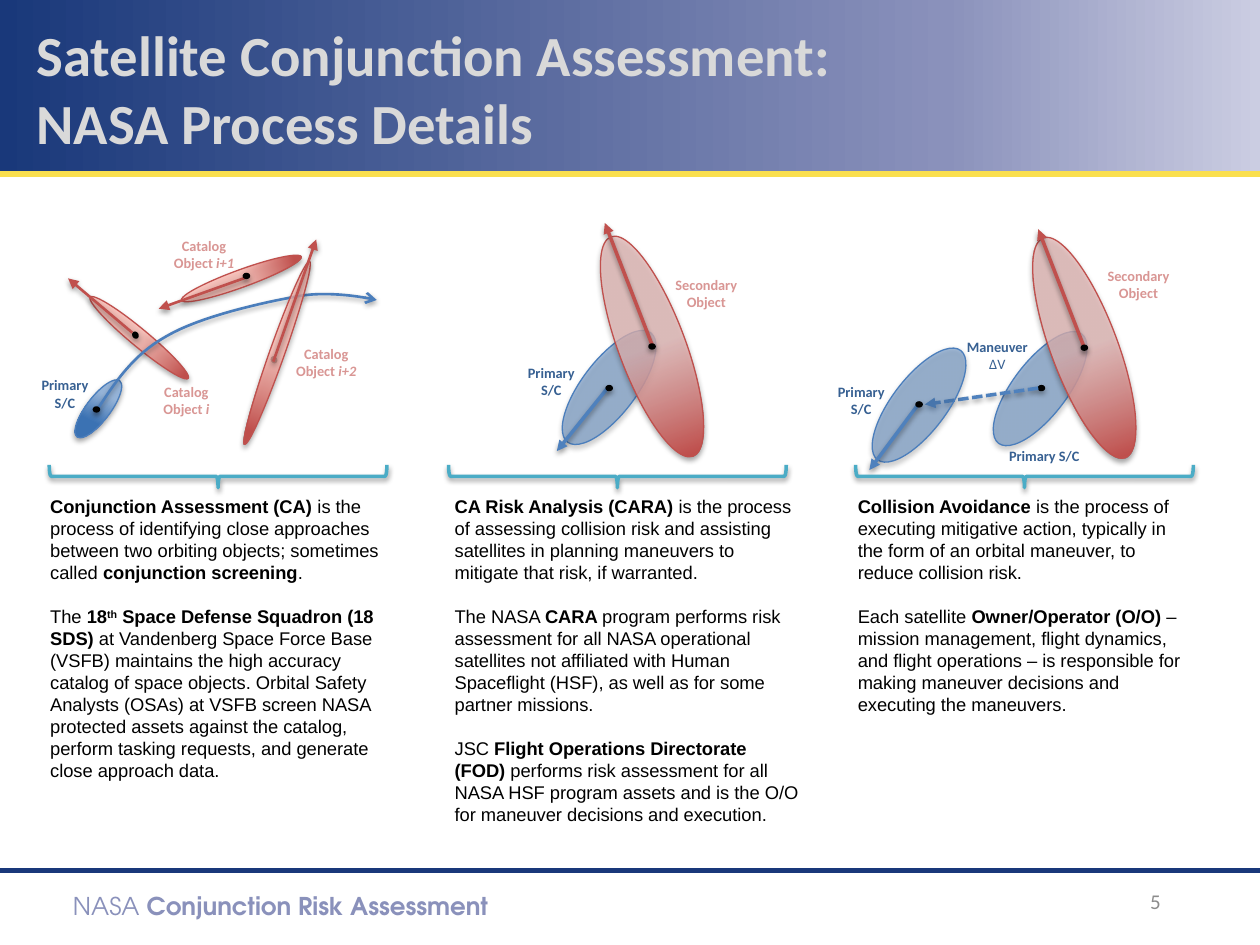
"""Build a slide on the three stages of satellite conjunction assessment."""
from dataclasses import dataclass

from pptx import Presentation
from pptx.dml.color import RGBColor
from pptx.enum.dml import MSO_LINE
from pptx.enum.shapes import MSO_CONNECTOR, MSO_SHAPE
from pptx.enum.text import MSO_ANCHOR, PP_ALIGN
from pptx.oxml import parse_xml
from pptx.oxml.ns import nsdecls, qn
from pptx.util import Pt

RECT, OVAL, BRACE = MSO_SHAPE.RECTANGLE, MSO_SHAPE.OVAL, MSO_SHAPE.RIGHT_BRACE
LINE, DASH = MSO_CONNECTOR.STRAIGHT, MSO_LINE.SQUARE_DOT
LEFT, MID, RIGHT = PP_ALIGN.LEFT, PP_ALIGN.CENTER, PP_ALIGN.RIGHT
CENTRE = MSO_ANCHOR.MIDDLE

COLORS = {
    "navy": "19387A", "lilac": "8A91BB", "mist": "CBCDE2", "gold": "FADF4E",
    "blue": "4F81BD", "edge": "4B7EBC", "sky": "95B3D7", "deep": "3B72B3",
    "red": "C0504D", "rose": "E6B9B8", "pink": "FFB8AF", "teal": "4BACC6",
    "black": "000000", "title": "D9D9D9", "page": "8C8C8C",
    "warm": "D99694", "cool": "376092",
}

# kind: (width, height, edge, gradient angle, stops of position, colour, alpha)
KINDS = {
    "dot": (3.6, 2.9, "black", 0, [(0, "black", 100), (100, "black", 100)]),
    "craft": (78.5, 31, "edge", 0, [(0, "blue", 48), (100, "blue", 48)]),
    "threat": (38.2, 133.9, "red", 90, [(50, "rose", 74), (91, "red", 100)]),
    "near": (40.3, 13.7, "edge", 170, [(33, "sky", 100), (66, "deep", 100)]),
    "thin": (72.7, 10.1, "red", 180, [(50, "pink", 74), (90, "red", 100)]),
    "long": (110.9, 8.6, "red", 180, [(50, "pink", 74), (90, "red", 100)]),
}


@dataclass
class Oval:
    """An ellipse placed by its centre."""
    kind: str
    x: float
    y: float
    turn: float = 0


@dataclass
class Arrow:
    """A straight arrow."""
    start: tuple
    end: tuple
    color: str
    width: float = 2
    dash: bool = False


@dataclass
class Curve:
    """A chain of cubic arcs with an arrowhead."""
    start: tuple
    arcs: list


@dataclass
class Brace:
    """A flat brace under a scene, placed by its centre."""
    x: float


@dataclass
class Label:
    """A small caption in a scene."""
    text: str
    color: str
    x: float
    y: float
    w: float
    align: int = MID


SCENES = [
    Oval("craft", 594.4, 222.1, 307.3), Oval("threat", 619.6, 198.7, 339.5),
    Oval("dot", 595.1, 221.8),
    Arrow((619.9, 199.4), (593.3, 131), "red"),
    Arrow((593.3, 221.8), (528.5, 231.1), "blue", dash=True),
    Oval("craft", 525.2, 231.5, 307.3),
    Arrow((524.2, 231.8), (496.8, 268.6), "blue"),
    Oval("dot", 619.6, 198.7), Oval("dot", 525.2, 231.1), Brace(585.4),
    Oval("craft", 348.1, 221.4, 307.3), Oval("threat", 372.6, 198, 339.5),
    Arrow((373, 198), (345.6, 127.4), "red"),
    Arrow((347.8, 221), (318.2, 257.8), "blue"),
    Oval("dot", 372.6, 198), Oval("dot", 348.1, 221.8), Brace(352.8),
    Oval("near", 56.2, 233.6, 307.3), Oval("thin", 137.9, 159.1, 160),
    Oval("thin", 79.6, 193, 219.7), Oval("dot", 77.4, 191.5, 59.4),
    Curve((54.7, 235.4), [((65.5, 218.9), (75.6, 203), (95, 192.2)),
                          ((114.5, 180.7), (150.5, 172.8), (170.6, 169.2)),
                          ((190.8, 165.6), (215.3, 171.4), (215.3, 171.4))]),
    Arrow((75.6, 190.1), (38.9, 159.1), "red", 1.5),
    Arrow((141.1, 158.4), (90.7, 176.4), "red", 1.5),
    Oval("dot", 140.8, 157.7), Oval("dot", 156.6, 205.6, 59.4),
    Oval("dot", 55.1, 234), Brace(124.6), Oval("long", 158.4, 201.6, 289.5),
    Arrow((156.2, 206.6), (180.7, 136.8), "red", 1.5),
]
LABELS = [
    Label("*Catalog Object |/i+2", "warm", 159.8, 193.7, 53.3),
    Label("*Catalog Object |/i+1", "warm", 87.8, 131.8, 57.6),
    Label("*Catalog Object|/ i", "warm", 84.2, 215.3, 44.6),
    Label("*Primary S/C", "cool", 291.6, 204.5, 46.8),
    Label("*Secondary Object", "warm", 376.6, 154.1, 54),
    Label("*Secondary Object", "warm", 622.1, 149, 56.9),
    Label("*Primary S/C", "cool", 569.5, 252, 77.8, LEFT),
    Label("*Maneuver\v|∆V", "cool", 542.9, 189.4, 54),
    Label("*Primary S/C", "cool", 13.7, 211.7, 46.8),
    Label("*Primary S/C", "cool", 468.7, 215.3, 46.8),
]
COLUMNS = [
    (21.6, 212.4, [
        "*Conjunction Assessment (CA)| is the process of identifying close approaches between two "
        "orbiting objects; sometimes called |*conjunction screening|.",
        "The |*18|^th|* Space Defense Squadron (18 SDS) |at Vandenberg Space Force Base (VSFB) "
        "maintains the high accuracy catalog of space objects. Orbital Safety Analysts (OSAs) at "
        "VSFB screen NASA protected assets against the catalog, perform tasking requests, and "
        "generate close approach data."]),
    (252.7, 212.4, [
        "*CA Risk Analysis (CARA) |is the process of assessing collision risk and assisting "
        "satellites in planning maneuvers to mitigate that risk, if warranted.",
        "The NASA |*CARA |program performs risk assessment for all NASA operational satellites "
        "not affiliated with Human Spaceflight (HSF), as well as for some partner missions.",
        "JSC |*Flight Operations Directorate (FOD)| performs risk assessment for all NASA HSF "
        "program assets and is the O/O for maneuver decisions and execution."]),
    (483.1, 203.8, [
        "*Collision Avoidance |is the process of executing mitigative action, typically in the "
        "form of an orbital maneuver, to reduce collision risk.",
        "Each satellite |*Owner/Operator (O/O)| – mission management, flight dynamics, and flight "
        "operations – is responsible for making maneuver decisions and executing the maneuvers."]),
]


def rgb(name: str) -> RGBColor:
    """Look up a colour."""
    return RGBColor.from_string(COLORS[name])


def blend(shape, stops: list, angle: float) -> None:
    """Fill a shape with a linear gradient."""
    marks = "".join(
        f'<a:gs pos="{pos * 1000}"><a:srgbClr val="{COLORS[name]}">'
        f'<a:alpha val="{alpha * 1000}"/></a:srgbClr></a:gs>' for pos, name, alpha in stops)
    shape.fill.background()
    props = shape._element.spPr
    props.replace(props.find(qn("a:noFill")), parse_xml(
        f'<a:gradFill {nsdecls("a")} rotWithShape="1"><a:gsLst>{marks}</a:gsLst>'
        f'<a:lin ang="{angle * 60000}" scaled="0"/></a:gradFill>'))


def trim(shape, color: str, width: float, head: str = "", shade: int = 35) -> None:
    """Set the line, arrowhead and shadow of a shape or connector."""
    shape.line.color.rgb = rgb(color)
    shape.line.width = Pt(width)
    props = shape._element.spPr
    if head:
        props.find(qn("a:ln")).append(parse_xml(f'<a:tailEnd {nsdecls("a")} type="{head}"/>'))
    cast = (f'<a:outerShdw blurRad="{Pt(3.1)}" dist="{Pt(1.7)}" dir="5400000" rotWithShape="0">'
            f'<a:srgbClr val="000000"><a:alpha val="{shade * 1000}"/></a:srgbClr></a:outerShdw>')
    props.append(parse_xml(f'<a:effectLst {nsdecls("a")}>{cast if shade else ""}</a:effectLst>'))


def add_oval(shapes, oval: Oval) -> None:
    """Draw an ellipse."""
    w, h, edge, angle, stops = KINDS[oval.kind]
    shape = shapes.add_shape(OVAL, Pt(oval.x - w / 2), Pt(oval.y - h / 2), Pt(w), Pt(h))
    shape.rotation = oval.turn
    blend(shape, stops, angle)
    trim(shape, edge, 0.75)


def add_arrow(shapes, arrow: Arrow) -> None:
    """Draw a straight arrow."""
    line = shapes.add_connector(LINE, *map(Pt, arrow.start + arrow.end))
    if arrow.dash:
        line.line.dash_style = DASH
    trim(line, arrow.color, arrow.width, "triangle", 38)


def add_curve(shapes, curve: Curve, steps: int = 16) -> None:
    """Draw cubic arcs as a fine open outline."""
    spots, a = [], curve.start
    for b, c, d in curve.arcs:
        for t in (n / steps for n in range(1, steps + 1)):
            u = 1 - t
            spots.append(tuple(
                Pt(u**3 * a[k] + 3 * u * u * t * b[k] + 3 * u * t * t * c[k] + t**3 * d[k])
                for k in (0, 1)))
        a = d
    pen = shapes.build_freeform(*map(Pt, curve.start))
    pen.add_line_segments(spots, close=False)
    shape = pen.convert_to_shape()
    shape.fill.background()
    trim(shape, "edge", 1.5, "arrow")


def add_brace(shapes, brace: Brace, w: float = 13, h: float = 193) -> None:
    """Draw a brace turned to point down."""
    shape = shapes.add_shape(BRACE, Pt(brace.x - w / 2), Pt(272.2 - h / 2), Pt(w), Pt(h))
    shape.rotation = 90
    shape.fill.background()
    trim(shape, "teal", 2, shade=38)


def write(frame, texts: list, size: float, face: str, color: str, align=LEFT, gap=0) -> None:
    """Fill a frame; chunks start with * for bold, / for bold italic, ^ for bold raised."""
    frame.word_wrap = True
    for n, text in enumerate(texts):
        para = frame.add_paragraph() if n else frame.paragraphs[0]
        para.alignment = align
        para.space_before = Pt(gap if n else 0)
        font = para.font
        font.size, font.name, font.color.rgb = Pt(size), face, rgb(color)
        chunks = text.split("|")
        same = all(chunk[0] in "*/^" for chunk in chunks)
        font.bold = same
        for chunk in chunks:
            mark = chunk[0] if chunk[0] in "*/^" else ""
            para.add_line_break() if chunk.startswith("\v") else None
            head, *rest = chunk[len(mark):].split("\v")
            run = para.add_run()
            run.text = head
            if mark and not same:
                run.font.bold = True
            if mark == "/":
                run.font.italic = True
            if mark == "^":
                run.font._element.set("baseline", "30000")
            if rest:
                para.add_line_break()
            if rest and rest[0]:
                para.add_run().text = rest[0]


def add_text(shapes, x: float, y: float, w: float, h: float, *style, **more):
    """Add a text box and give back its frame."""
    frame = shapes.add_textbox(Pt(x), Pt(y), Pt(w), Pt(h)).text_frame
    write(frame, *style, **more)
    return frame


def main() -> None:
    """Build and save the slide."""
    deck = Presentation()
    deck.slide_width, deck.slide_height = Pt(720), Pt(540)
    slide = deck.slides.add_slide(deck.slide_layouts[5])
    shapes, title = slide.shapes, slide.shapes.title
    band = shapes.add_shape(RECT, 0, 0, Pt(720), Pt(100))
    blend(band, [(0, "navy", 100), (75, "lilac", 100), (100, "mist", 100)], 0)
    band.line.fill.background()
    band.shadow.inherit = False
    for y, color, width in ((497.5, "navy", 3), (99.4, "gold", 3.5)):
        trim(shapes.add_connector(LINE, 0, Pt(y), Pt(720), Pt(y)), color, width, shade=0)
    add_text(shapes, 34.6, 505.4, 253.4, 24.5, ["NASA|* Conjunction Risk Assessment"],
             14, "TeX Gyre Adventor", "lilac").word_wrap = False
    for x, w, texts in COLUMNS:
        add_text(shapes, x, 279.4, w, 172.8, texts, 10.5, "Arial", "black", gap=12.6)
    draw = {Oval: add_oval, Arrow: add_arrow, Curve: add_curve, Brace: add_brace}
    for item in SCENES:
        draw[type(item)](shapes, item)
    title.left, title.top, title.width, title.height = map(Pt, (13.7, 5, 694.8, 90))
    write(title.text_frame, ["*Satellite Conjunction Assessment:\vNASA Process Details"],
          32.4, "Calibri", "title")
    title.text_frame.vertical_anchor = CENTRE
    band._element.getparent().append(title._element)
    page = add_text(shapes, 508.3, 500.4, 162, 28.8, ["5"], 12, "Calibri", "page", RIGHT)
    page.vertical_anchor = CENTRE
    for tag in LABELS:
        add_text(shapes, tag.x, tag.y, tag.w, 27.4, [tag.text], 8.2, "Calibri", tag.color,
                 tag.align)
    deck.save("out.pptx")


if __name__ == "__main__":
    main()
